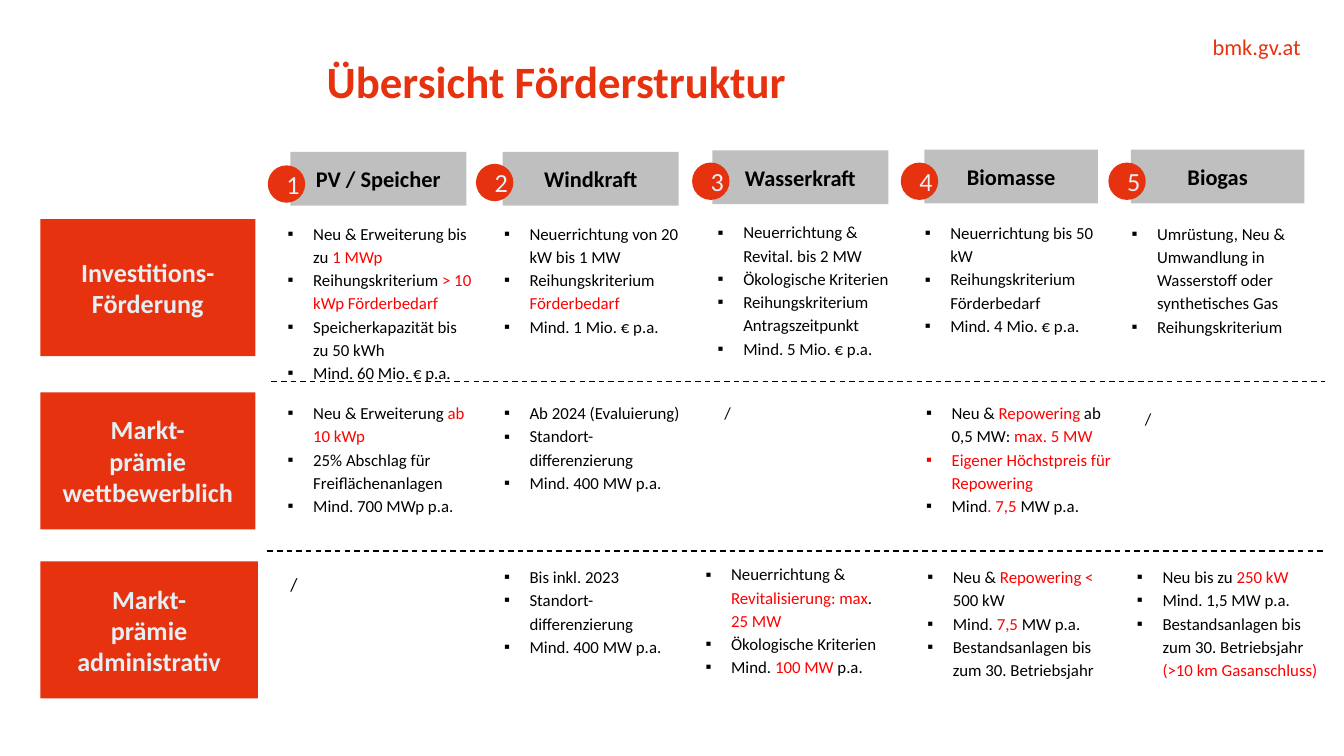
from lxml.etree import SubElement
from pptx import Presentation
from pptx.dml.color import RGBColor
from pptx.enum.dml import MSO_LINE
from pptx.enum.shapes import MSO_CONNECTOR, MSO_SHAPE
from pptx.enum.text import MSO_ANCHOR, MSO_AUTO_SIZE, PP_ALIGN
from pptx.oxml.ns import qn
from pptx.util import Pt

ORANGE = RGBColor(0xE6, 0x32, 0x0F)
RED = RGBColor(0xFF, 0x00, 0x00)
BLACK = RGBColor(0x00, 0x00, 0x00)
GREY = RGBColor(0xBF, 0xBF, 0xBF)
PALE = RGBColor(0xE6, 0xEF, 0xF3)

# name, header box, number circle position
TECHNOLOGIES = [
    ("PV / Speicher", (155.5, 81.4, 94.3, 28.8), (143.5, 88.6)),
    ("Windkraft", (269.3, 81.4, 94.3, 28.8), (255, 87.8)),
    ("Wasserkraft", (381.6, 80.6, 94.3, 28.8), (370.8, 87.1)),
    ("Biomasse", (495.2, 80.2, 93, 28.8), (482.6, 87.1)),
    ("Biogas", (605.8, 80.2, 93, 28.8), (593.8, 87.1)),
]

# label paragraphs, top, width
SCHEMES = [
    (["Investitions-", "Förderung"], 117.4, 115.2),
    (["Markt-\nprämie", "wettbewerblich"], 210.2, 115.2),
    (["Markt-\nprämie", "administrativ"], 300.8, 116.6),
]

# Text between bars is red
PV_INVESTMENT = ["Neu & Erweiterung bis zu |1 MWp|",
                 "Reihungskriterium |> 10 kWp Förderbedarf|",
                 "Speicherkapazität bis zu 50 kWh", "Mind. 60 Mio. € p.a."]
CELLS = [
    ((266.4, 118.1, 99.4, 100.8),
     ["Neuerrichtung von 20 kW bis 1 MW", "Reihungskriterium |Förderbedarf|",
      "Mind. 1 Mio. € p.a."]),
    ((380.9, 117.4, 99.4, 100.8),
     ["Neuerrichtung & Revital. bis 2 MW", "Ökologische Kriterien",
      "Reihungskriterium Antragszeitpunkt", "Mind. 5 Mio. € p.a."]),
    ((491.8, 117.7, 99.4, 100.8),
     ["Neuerrichtung bis 50 kW", "Reihungskriterium Förderbedarf",
      "Mind. 4 Mio. € p.a."]),
    ((602.6, 118.1, 100.1, 85),
     ["Umrüstung, Neu & Umwandlung in Wasserstoff oder synthetisches Gas",
      "Reihungskriterium"]),
    ((150.5, 214.2, 99.4, 86.4),
     ["Neu & Erweiterung |ab 10 kWp|", "25% Abschlag für Freiflächenanlagen",
      "Mind. 700 MWp p.a."]),
    ((266.4, 214.2, 99.4, 90),
     ["Ab 2024 (Evaluierung)", "Standort-differenzierung",
      "Mind. 400 MW p.a."]),
    ((492.5, 214.2, 106.6, 72),
     ["Neu & |Repowering| ab 0,5 MW: |max. 5 MW|",
      "|Eigener Höchstpreis für Repowering|", "Mind|. 7,5 |MW p.a."]),
    ((266.4, 302, 97.2, 72.7),
     ["Bis inkl. 2023", "Standort-differenzierung", "Mind. 400 MW p.a."]),
    ((374.4, 300.6, 100.8, 100.8),
     ["Neuerrichtung & |Revitalisierung: max|. |25 MW|",
      "Ökologische Kriterien", "Mind. |100 MW |p.a."]),
    ((493.2, 302, 97.9, 72.7),
     ["Neu & |Repowering < |500 kW", "Mind. |7,5| MW p.a.",
      "Bestandsanlagen bis zum 30. Betriebsjahr"]),
    ((605.5, 302, 103, 72.7),
     ["Neu bis zu |250 kW|", "Mind. 1,5 MW p.a.",
      "Bestandsanlagen bis zum 30. Betriebsjahr |(>10 km Gasanschluss)|"]),
]

# box, text size
EMPTY_CELLS = [
    ((384.5, 214.2, 99.4, 72), 9),
    ((609.8, 217.4, 20.9, 18.7), 9),
    ((151.9, 305.3, 99.4, 20.2), 10),
]


class SlideBuilder:
    font = "Calibri"
    title_format = {"line_spacing": Pt(30), "alignment": PP_ALIGN.LEFT}
    centred = {"alignment": PP_ALIGN.CENTER}
    list_format = {"line_spacing": 1.15, "space_before": Pt(0),
                   "alignment": PP_ALIGN.LEFT}

    def __init__(self, slide):
        self.s = slide

    def fill_text(self, sp, lines, size, color, bold=False, layout=None,
                  bullet=False, indent=0):
        tf = sp.text_frame
        style = {"name": self.font, "size": Pt(size), "bold": bold}
        for i, line in enumerate(lines):
            p = tf.add_paragraph() if i else tf.paragraphs[0]
            pPr = p._p.get_or_add_pPr()
            if bullet:
                pPr.set("marL", str(Pt(17.3)))
                pPr.set("indent", str(Pt(-13.7)))
                SubElement(pPr, qn("a:buFont")).set("typeface", "Arial")
                SubElement(pPr, qn("a:buChar")).set("char", "▪")
            elif indent:
                pPr.set("marL", str(Pt(indent)))
            for name, value in (layout or {}).items():
                setattr(p, name, value)
            for j, part in enumerate(line.split("|")):
                for k, text in enumerate(part.split("\n")):
                    if k:
                        p.add_line_break()
                    if text:
                        r = p.add_run()
                        r.text = text
                        for name, value in style.items():
                            setattr(r.font, name, value)
                        r.font.color.rgb = RED if j % 2 else color

    def frame(self, sp, box):
        """Place a text holder and give it a plain frame without insets."""
        for name, value in zip(("left", "top", "width", "height"), box):
            setattr(sp, name, Pt(value))
        settings = {"word_wrap": True, "auto_size": MSO_AUTO_SIZE.NONE,
                    "vertical_anchor": MSO_ANCHOR.TOP, "margin_left": 0,
                    "margin_right": 0, "margin_top": 0, "margin_bottom": 0}
        for name, value in settings.items():
            setattr(sp.text_frame, name, value)
        return sp

    def text_box(self, box):
        return self.frame(self.s.shapes.add_textbox(*map(Pt, box)), box)

    def title(self, text, box):
        sp = self.frame(self.s.shapes.title, box)
        self.fill_text(sp, [text], 24, ORANGE, True, self.title_format)

    def bullets(self, lines, box, placeholder=None):
        sp = self.frame(placeholder, box) if placeholder else self.text_box(box)
        self.fill_text(sp, lines, 9, BLACK, layout=self.list_format,
                       bullet=True)

    def empty_cell(self, box, size):
        self.fill_text(self.text_box(box), ["/"], size, BLACK,
                       layout=self.list_format, indent=3.6)

    def web_address(self, text, box):
        self.fill_text(self.text_box(box), [text], 12, ORANGE,
                       layout={"alignment": PP_ALIGN.RIGHT})

    def block(self, kind, box, fill, lines, size, color, bold=True):
        sp = self.s.shapes.add_shape(kind, *map(Pt, box))
        sp.shadow.inherit = False
        sp.fill.solid()
        sp.fill.fore_color.rgb = fill
        sp.line.fill.background()
        sp.text_frame.vertical_anchor = MSO_ANCHOR.MIDDLE
        self.fill_text(sp, lines, size, color, bold, self.centred)

    def divider(self, x1, x2, y):
        line = self.s.shapes.add_connector(
            MSO_CONNECTOR.STRAIGHT, Pt(x1), Pt(y), Pt(x2), Pt(y))
        line.line.color.rgb = BLACK
        line.line.width = Pt(0.75)
        line.line.dash_style = MSO_LINE.DASH
        SubElement(line._element.spPr, qn("a:effectLst"))


def main():
    prs = Presentation()
    prs.slide_width, prs.slide_height = Pt(720), Pt(405)
    s = prs.slides.add_slide(prs.slide_layouts[1])
    b = SlideBuilder(s)

    b.web_address("bmk.gv.at", (523.4, 18, 173.5, 14.4))
    b.title("Übersicht Förderstruktur", (175, 27.4, 440.6, 31))
    for number, (name, box, (x, y)) in enumerate(TECHNOLOGIES, 1):
        b.block(MSO_SHAPE.RECTANGLE, box, GREY, [name], 12, BLACK)
        b.block(MSO_SHAPE.OVAL, (x, y, 20, 20), ORANGE, [str(number)], 14,
                PALE, bold=False)
    for lines, top, width in SCHEMES:
        b.block(MSO_SHAPE.RECTANGLE, (21.6, top, width, 73.4), ORANGE, lines,
                14, PALE)
    b.bullets(PV_INVESTMENT, (150.5, 118.1, 103.7, 82.8), s.placeholders[1])
    for box, lines in CELLS:
        b.bullets(lines, box)
    for box, size in EMPTY_CELLS:
        b.empty_cell(box, size)
    b.divider(145.4, 709.9, 204.5)
    b.divider(143.3, 708.5, 295.2)
    prs.save("out.pptx")


if __name__ == "__main__":
    main()
